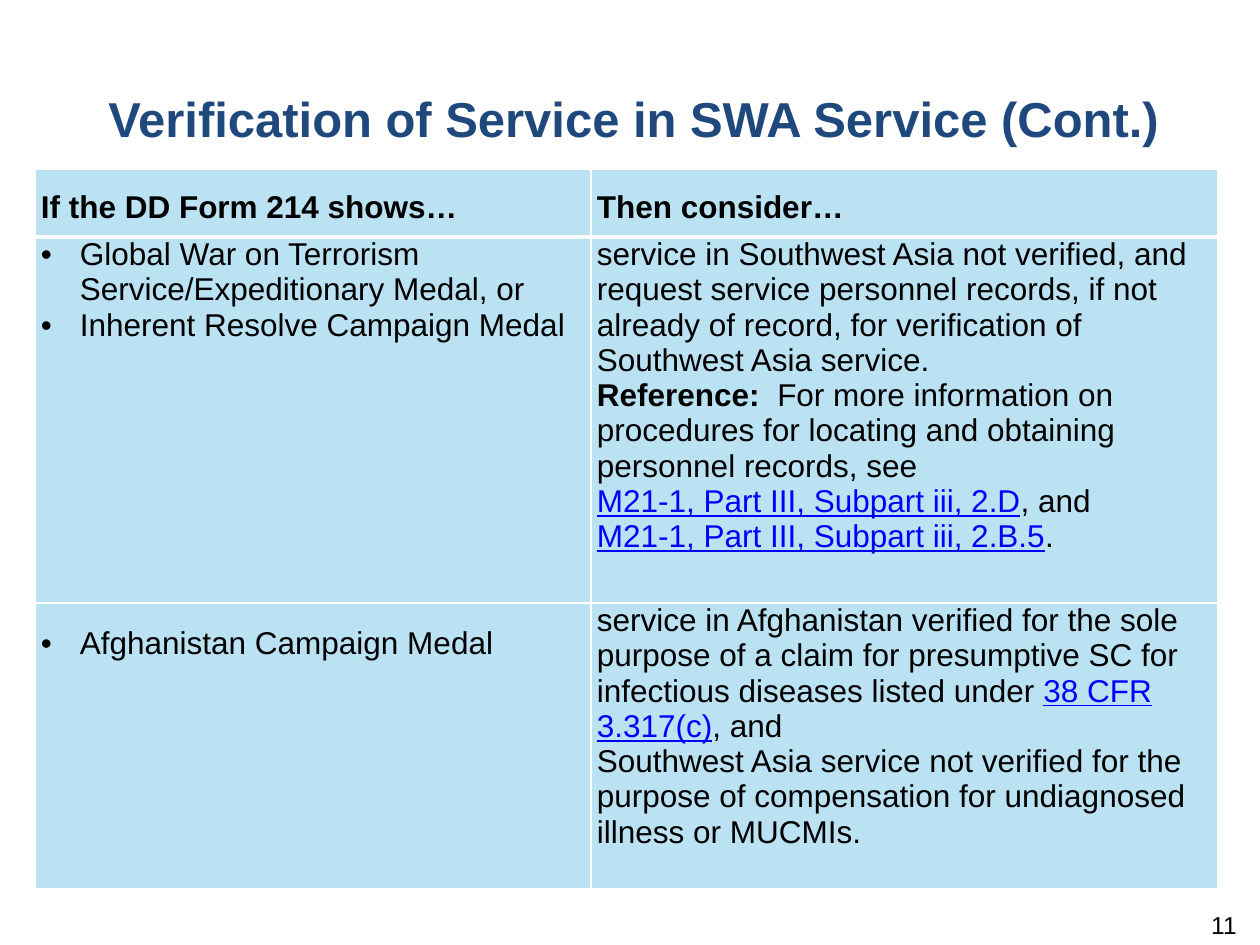
"""Builds a slide with a two-column table on verifying Southwest Asia service."""
from lxml import etree
from pptx import Presentation
from pptx.dml.color import RGBColor
from pptx.enum.text import MSO_ANCHOR, PP_ALIGN
from pptx.oxml.ns import qn
from pptx.util import Pt

SCALE = 914400 / 126
FONT = "Arial"
NAVY = RGBColor(0x1F, 0x49, 0x7D)
BLACK = RGBColor(0, 0, 0)
LINK_BLUE = RGBColor(0, 0, 0xFF)
PALE_BLUE = RGBColor(0xBB, 0xE2, 0xF2)
CENTER, RIGHT = PP_ALIGN.CENTER, PP_ALIGN.RIGHT
MIDDLE, TOP = MSO_ANCHOR.MIDDLE, MSO_ANCHOR.TOP

TITLE = "Verification of Service in SWA Service (Cont.)"
PAGE_NUMBER = "11"
BREAK = "break"
HEADERS = ["If the DD Form 214 shows…", "Then consider…"]
ROWS = [
    (
        [
            [("Global War on Terrorism Service/Expeditionary Medal, or", "plain")],
            [("Inherent Resolve Campaign Medal", "plain")],
        ],
        [
            [("service in Southwest Asia not verified, and", "plain")],
            [("request service personnel records, if not already of record, "
              "for verification of Southwest Asia service.", "plain")],
            [("Reference:  ", "bold"),
             ("For more information on procedures for locating and obtaining "
              "personnel records, see", "plain"),
             ("", BREAK),
             ("M21-1, Part III, Subpart iii, 2.D", "link"),
             (", and", "plain"),
             ("", BREAK),
             ("M21-1, Part III, Subpart iii, 2.B.5", "link"),
             (".", "plain")],
        ],
    ),
    (
        [[("Afghanistan Campaign Medal", "plain")]],
        [
            [("service in Afghanistan verified for the sole purpose of a claim for "
              "presumptive SC for infectious diseases listed under ", "plain"),
             ("38 CFR 3.317(c)", "link"),
             (", and", "plain")],
            [("Southwest Asia service not verified for the purpose of compensation "
              "for undiagnosed illness or MUCMIs.", "plain")],
        ],
    ),
]
COLUMN_WIDTHS = [556, 627]
ROW_HEIGHTS = [68, 366, 286]
LEFT_TOP_MARGINS = [0, 23]
HEADER_TOP_MARGIN = 21
BULLET_INDENT = 39


def px(length):
    return round(length * SCALE)


def add_text(para, text, size, color=BLACK, bold=False, underline=False):
    span = para.add_run()
    span.text = text
    font = span.font
    font.name, font.size, font.bold = FONT, Pt(size), bold
    font.color.rgb = color
    if underline:
        font.underline = True


def add_bullet(para):
    properties = para._p.get_or_add_pPr()
    properties.set("marL", str(px(BULLET_INDENT)))
    properties.set("indent", str(-px(BULLET_INDENT)))
    etree.SubElement(properties, qn("a:buFont"), typeface=FONT)
    etree.SubElement(properties, qn("a:buChar"), char="•")


def style_cell(cell, top_margin, heavy_edge):
    cell.margin_left = cell.margin_right = px(6)
    cell.margin_top, cell.margin_bottom = px(top_margin), 0
    cell.vertical_anchor = TOP
    properties = cell._tc.get_or_add_tcPr()
    for side in ("L", "R", "T", "B"):
        width = Pt(3 if side == heavy_edge else 1)
        line = etree.SubElement(properties, qn(f"a:ln{side}"), w=str(width))
        fill = etree.SubElement(line, qn("a:solidFill"))
        etree.SubElement(fill, qn("a:srgbClr"), val="FFFFFF")
    cell.fill.solid()
    cell.fill.fore_color.rgb = PALE_BLUE


def fill_cell(cell, paragraphs, bulleted=False):
    frame = cell.text_frame
    for index, spans in enumerate(paragraphs):
        para = frame.add_paragraph() if index else frame.paragraphs[0]
        if bulleted:
            add_bullet(para)
        for text, style in spans:
            if style == BREAK:
                para.add_line_break()
            else:
                link = style == "link"
                add_text(para, text, 18, LINK_BLUE if link else BLACK,
                         style == "bold", link)


def add_title(page):
    title = page.shapes.title
    title.left, title.top, title.width, title.height = map(px, (42, 79, 1183, 90))
    frame = title.text_frame
    frame.word_wrap = True
    frame.vertical_anchor = MIDDLE
    frame.margin_top, frame.margin_bottom = px(6), px(18)
    frame.paragraphs[0].alignment = CENTER
    add_text(frame.paragraphs[0], TITLE, 28, NAVY, True)


def add_service_table(page):
    table = page.shapes.add_table(
        len(ROW_HEIGHTS), len(COLUMN_WIDTHS), px(35), px(169),
        px(sum(COLUMN_WIDTHS)), px(sum(ROW_HEIGHTS))).table
    table.horz_banding = False
    for column, width in zip(table.columns, COLUMN_WIDTHS):
        column.width = px(width)
    for row, height in zip(table.rows, ROW_HEIGHTS):
        row.height = px(height)
    for column, header in enumerate(HEADERS):
        cell = table.cell(0, column)
        style_cell(cell, HEADER_TOP_MARGIN, "B")
        fill_cell(cell, [[(header, "bold")]])
    for row, (contents, margin) in enumerate(zip(ROWS, LEFT_TOP_MARGINS), 1):
        for column, paragraphs in enumerate(contents):
            cell = table.cell(row, column)
            style_cell(cell, 0 if column else margin, "T" if row == 1 else None)
            fill_cell(cell, paragraphs, column == 0)


def add_page_number(page):
    box = page.shapes.add_textbox(px(955), px(910), px(294), px(35))
    frame = box.text_frame
    frame.word_wrap = True
    frame.margin_top = 0
    frame.paragraphs[0].alignment = RIGHT
    add_text(frame.paragraphs[0], PAGE_NUMBER, 14)


def main():
    deck = Presentation()
    deck.slide_width, deck.slide_height = px(1260), px(945)
    page = deck.slides.add_slide(deck.slide_layouts[5])
    add_title(page)
    add_service_table(page)
    add_page_number(page)
    deck.save("out.pptx")


if __name__ == "__main__":
    main()
